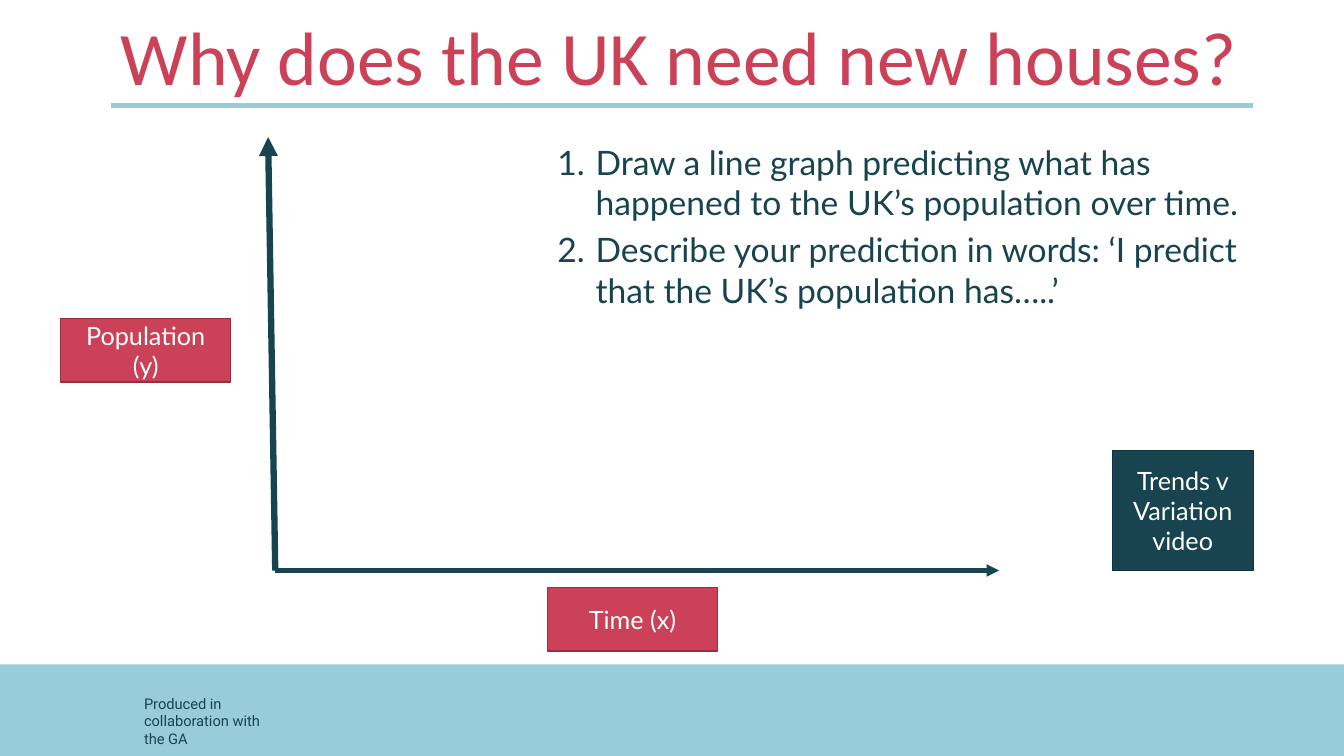
"""Builds a lesson slide with blank graph axes for predicting UK population."""
from lxml import etree
from pptx import Presentation
from pptx import util as u
from pptx.dml.color import RGBColor
from pptx.enum import shapes, text
from pptx.oxml.ns import qn

THEME = {
    "red": RGBColor.from_string("CB4157"),
    "red_edge": RGBColor.from_string("963040"),
    "teal": RGBColor.from_string("17444F"),
    "teal_edge": RGBColor.from_string("11323A"),
    "sky": RGBColor.from_string("98CCDB"),
    "white": RGBColor.from_string("FFFFFF"),
    "title": u.Pt(54),
    "body": u.Pt(24),
    "label": u.Pt(18),
    "credit": u.Pt(10.5),
    "gap": u.Pt(4.8),
}
LEFT, CONTENT, MIDDLE = 8.25, 85, 40.73
ORIGIN, AXIS_TOP, AXIS_FOOT = 20.48, 18.13, 75.47
BAND_TOP = 87.87

deck = Presentation()
deck.slide_width, deck.slide_height = u.Inches(13.33), u.Inches(7.5)
page = deck.slides.add_slide(deck.slide_layouts[6])


def place(*shares):
    """Turns alternating percentages of slide width and height into lengths."""
    sides = (deck.slide_width, deck.slide_height) * 2
    return [u.Emu(round(side * share / 100)) for side, share in zip(sides, shares)]


def write(box, *lines, font="Lato", size="label", color="white", align=text.PP_ALIGN.LEFT,
          anchor=text.MSO_ANCHOR.TOP, numbered=False):
    """Fills a box with formatted paragraphs."""
    frame = box.text_frame
    frame.word_wrap = True
    frame.vertical_anchor = anchor
    for index, line in enumerate(lines):
        para = frame.add_paragraph() if index else frame.paragraphs[0]
        para.alignment = align
        if numbered:
            if index:
                para.space_before = THEME["gap"]
            props = para._p.get_or_add_pPr()
            props.set("marL", str(u.Inches(0.38)))
            props.set("indent", str(-u.Inches(0.38)))
            etree.SubElement(props, qn("a:buFont"), typeface="+mj-lt")
            etree.SubElement(props, qn("a:buAutoNum"), type="arabicPeriod")
        span = para.add_run()
        span.text = line
        span.font.name = font
        span.font.size = THEME[size]
        span.font.color.rgb = THEME[color]


band = page.shapes.add_shape(shapes.MSO_SHAPE.RECTANGLE, *place(0, BAND_TOP, 100, 100 - BAND_TOP))
band.shadow.inherit = False
band.fill.solid()
band.fill.fore_color.rgb = THEME["sky"]
band.line.fill.background()

credit = page.shapes.add_textbox(*place(9.98, 91.2, 10.28, 8.27))
write(credit, "Produced in collaboration with the GA", font="Roboto", size="credit", color="teal")

title = page.shapes.add_textbox(*place(LEFT, 0.93, CONTENT, 13.07))
write(title, "Why does the UK need new houses?", font="Calibri", size="title", color="red",
      anchor=text.MSO_ANCHOR.BOTTOM)

for ends, color, weight, arrow in (
    ((LEFT, 14, LEFT + CONTENT, 14), "sky", 3.5, False),
    ((ORIGIN, AXIS_FOOT, 19.95, AXIS_TOP), "teal", 4.5, True),
    ((ORIGIN, AXIS_FOOT, 74.34, AXIS_FOOT), "teal", 3, True),
):
    rule = page.shapes.add_connector(shapes.MSO_CONNECTOR.STRAIGHT, *place(*ends))
    rule.line.color.rgb = THEME[color]
    rule.line.width = u.Pt(weight)
    if arrow:
        etree.SubElement(rule.line._get_or_add_ln(), qn("a:tailEnd"), type="triangle")
    etree.SubElement(rule._element.spPr, qn("a:effectLst"))

tasks = page.shapes.add_textbox(*place(MIDDLE, AXIS_TOP, 52.59, 24))
write(tasks,
      "Draw a line graph predicting what has happened to the UK’s population over time.",
      "Describe your prediction in words: ‘I predict that the UK’s population has…..’",
      size="body", color="teal", numbered=True)

for caption, area, color in (
    ("Population (y)", (4.5, 42.13, 12.68, 8.4), "red"),
    ("Time (x)", (MIDDLE, 77.73, 12.68, 8.4), "red"),
    ("Trends v Variation video", (82.75, 59.6, 10.5, 15.87), "teal"),
):
    label = page.shapes.add_shape(shapes.MSO_SHAPE.RECTANGLE, *place(*area))
    label.shadow.inherit = False
    label.fill.solid()
    label.fill.fore_color.rgb = THEME[color]
    label.line.color.rgb = THEME[color + "_edge"]
    label.line.width = u.Pt(0.85)
    write(label, caption, align=text.PP_ALIGN.CENTER, anchor=text.MSO_ANCHOR.MIDDLE)

deck.save("out.pptx")
